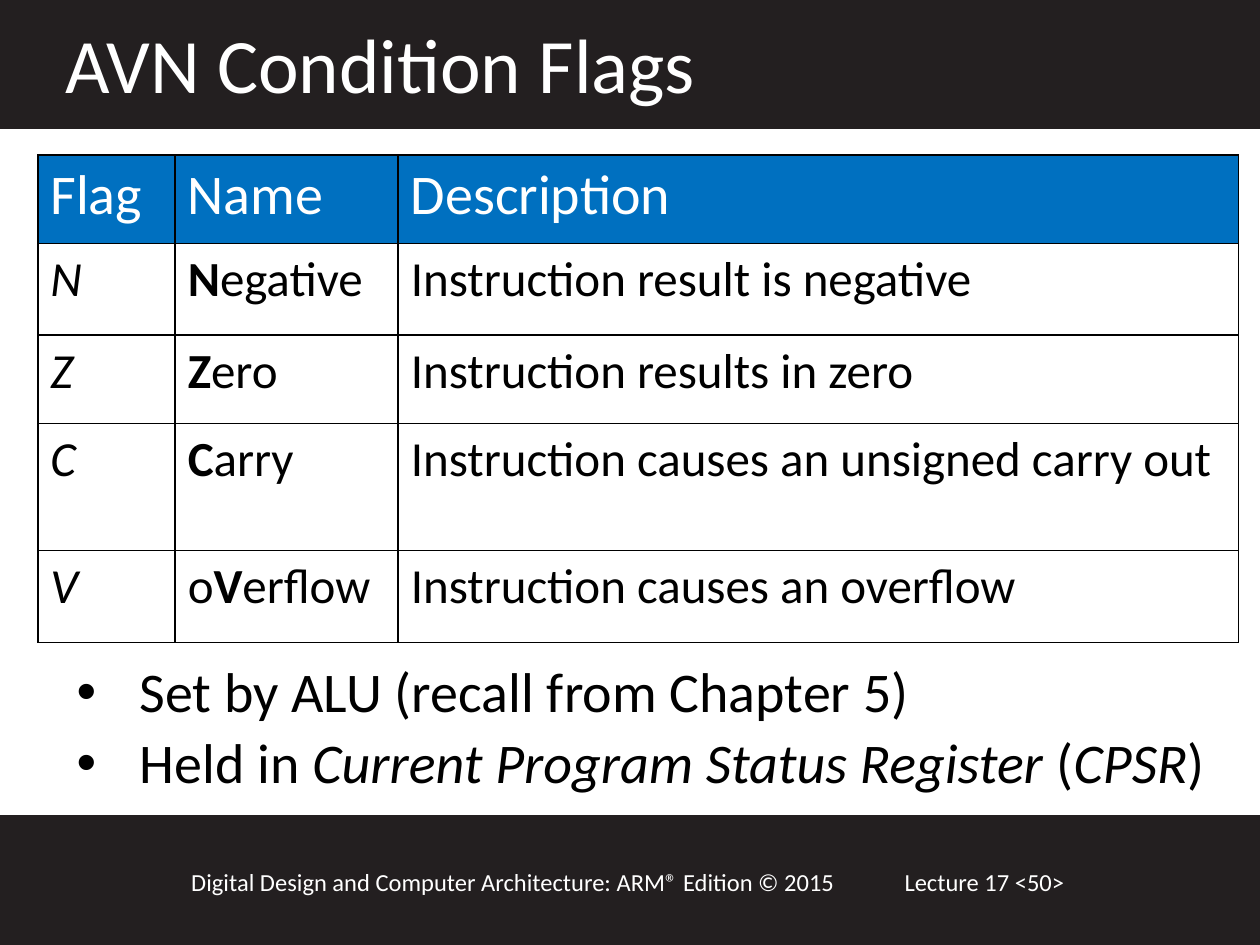
from typing import NamedTuple

from lxml.etree import SubElement as Sub
from pptx import Presentation
from pptx.dml.color import RGBColor as RGB
from pptx.enum.shapes import MSO_SHAPE as Shape
from pptx.enum.text import MSO_ANCHOR as Anchor, PP_ALIGN as Align
from pptx.oxml.ns import qn
from pptx.util import Pt

INK = RGB(0x23, 0x1F, 0x20)
WHITE = RGB(0xFF, 0xFF, 0xFF)
BLACK = RGB(0x00, 0x00, 0x00)
BLUE = RGB(0x00, 0x70, 0xC0)
FONT = "Calibri"


class Run(NamedTuple):
    text: str
    bold: bool = False
    ital: bool = False


class Box(NamedTuple):
    left: float
    top: float
    width: float
    height: float

    def pts(self) -> list:
        return [Pt(n) for n in self]


class Flag(NamedTuple):
    sign: str
    name: list
    note: str
    height: float


class Note(NamedTuple):
    text: str
    box: Box


BARS = [Box(0, 466.5, 720, 73.5), Box(0, 0, 720, 72.7)]
FOOT = [
    Note("Lecture 17 <50>", Box(509.8, 491.8, 156.2, 24.5)),
    Note("Digital Design and Computer Architecture: ARM® Edition © 2015",
         Box(102.2, 491.8, 414, 24.5)),
]
HEADS = ["Flag", "Name", "Description"]
COLS = [78.5, 127.5, 480.2]
HEAD_H = 50.4
FLAGS = [
    Flag("N", [Run("N", bold=True), Run("egative")],
         "Instruction result is negative", 52.5),
    Flag("Z", [Run("Z", bold=True), Run("ero")],
         "Instruction results in zero", 50.4),
    Flag("C", [Run("C", bold=True), Run("arry")],
         "Instruction causes an unsigned carry out", 72.7),
    Flag("V", [Run("o"), Run("V", bold=True), Run("erflow")],
         "Instruction causes an overflow", 52.5),
]
POINTS = [
    [Run("Set by ALU (recall from Chapter 5)")],
    [Run("Held in "), Run("Current Program Status Register", ital=True),
     Run(" ("), Run("CPSR", ital=True), Run(")")],
]


def write(para, text, *, size: float, color: RGB) -> None:
    """Fill a paragraph from a string or a list of runs."""
    para.alignment = Align.LEFT
    for part in [Run(text)] if isinstance(text, str) else text:
        run = para.add_run()
        run.text = part.text
        font = run.font
        font.name, font.size = FONT, Pt(size)
        font.bold, font.italic = part.bold, part.ital
        font.color.rgb = color


def add_bar(slide, box: Box) -> None:
    bar = slide.shapes.add_shape(Shape.RECTANGLE, *box.pts())
    bar.shadow.inherit = False
    bar.fill.solid()
    bar.fill.fore_color.rgb = INK
    bar.line.color.rgb = INK
    bar.line.width = Pt(2)


def add_box(slide, box: Box):
    frame = slide.shapes.add_textbox(*box.pts()).text_frame
    frame.word_wrap = True
    return frame


def add_bullet(para) -> None:
    props = para._p.get_or_add_pPr()
    props.set("marL", str(Pt(36)))
    props.set("indent", str(Pt(-36)))
    Sub(props, qn("a:buFont")).set("typeface", "Arial")
    Sub(props, qn("a:buChar")).set("char", "•")


def add_edges(cell) -> None:
    props = cell._tc.get_or_add_tcPr()
    for at, side in enumerate(("lnL", "lnR", "lnT", "lnB")):
        line = props.makeelement(qn(f"a:{side}"), {"w": str(Pt(1))})
        fill = Sub(line, qn("a:solidFill"))
        Sub(fill, qn("a:srgbClr")).set("val", str(BLACK))
        props.insert(at, line)


def fill_cell(cell, text, *, size: float, color: RGB, fill: RGB) -> None:
    cell.fill.solid()
    cell.fill.fore_color.rgb = fill
    add_edges(cell)
    write(cell.text_frame.paragraphs[0], text, size=size, color=color)


def add_flags(slide) -> None:
    tall = [HEAD_H] + [flag.height for flag in FLAGS]
    box = Box(21.6, 88.6, sum(COLS), sum(tall))
    table = slide.shapes.add_table(len(tall), len(COLS), *box.pts()).table
    for col, width in zip(table.columns, COLS):
        col.width = Pt(width)
    for row, height in zip(table.rows, tall):
        row.height = Pt(height)
    for cell, head in zip(table.rows[0].cells, HEADS):
        fill_cell(cell, head, size=32, color=WHITE, fill=BLUE)
    for at, flag in enumerate(FLAGS, 1):
        parts = [[Run(flag.sign, ital=True)], flag.name, flag.note]
        for cell, part in zip(table.rows[at].cells, parts):
            fill_cell(cell, part, size=28, color=BLACK, fill=WHITE)


def main() -> None:
    deck = Presentation()
    deck.slide_width, deck.slide_height = Pt(720), Pt(540)
    slide = deck.slides.add_slide(deck.slide_layouts[5])

    # Dark bars and footer
    for bar in BARS:
        add_bar(slide, bar)
    for note in FOOT:
        write(add_box(slide, note.box).paragraphs[0], note.text,
              size=14, color=WHITE)

    # Title, raised above its bar
    title = slide.shapes.title
    box = Box(30.2, 5.8, 683.3, 60.5)
    title.left, title.top, title.width, title.height = box.pts()
    title.text_frame.vertical_anchor = Anchor.TOP
    write(title.text_frame.paragraphs[0], "AVN Condition Flags",
          size=44, color=WHITE)
    slide.shapes._spTree.append(title._element)

    # Flag table
    add_flags(slide)

    # Bullet points
    frame = add_box(slide, Box(36.7, 375.8, 678.2, 96.5))
    for at, point in enumerate(POINTS):
        para = frame.add_paragraph() if at else frame.paragraphs[0]
        add_bullet(para)
        para.line_spacing = 0.9
        if at:
            para.space_before = Pt(6.4)
        write(para, point, size=32, color=BLACK)

    deck.save("out.pptx")


if __name__ == "__main__":
    main()
